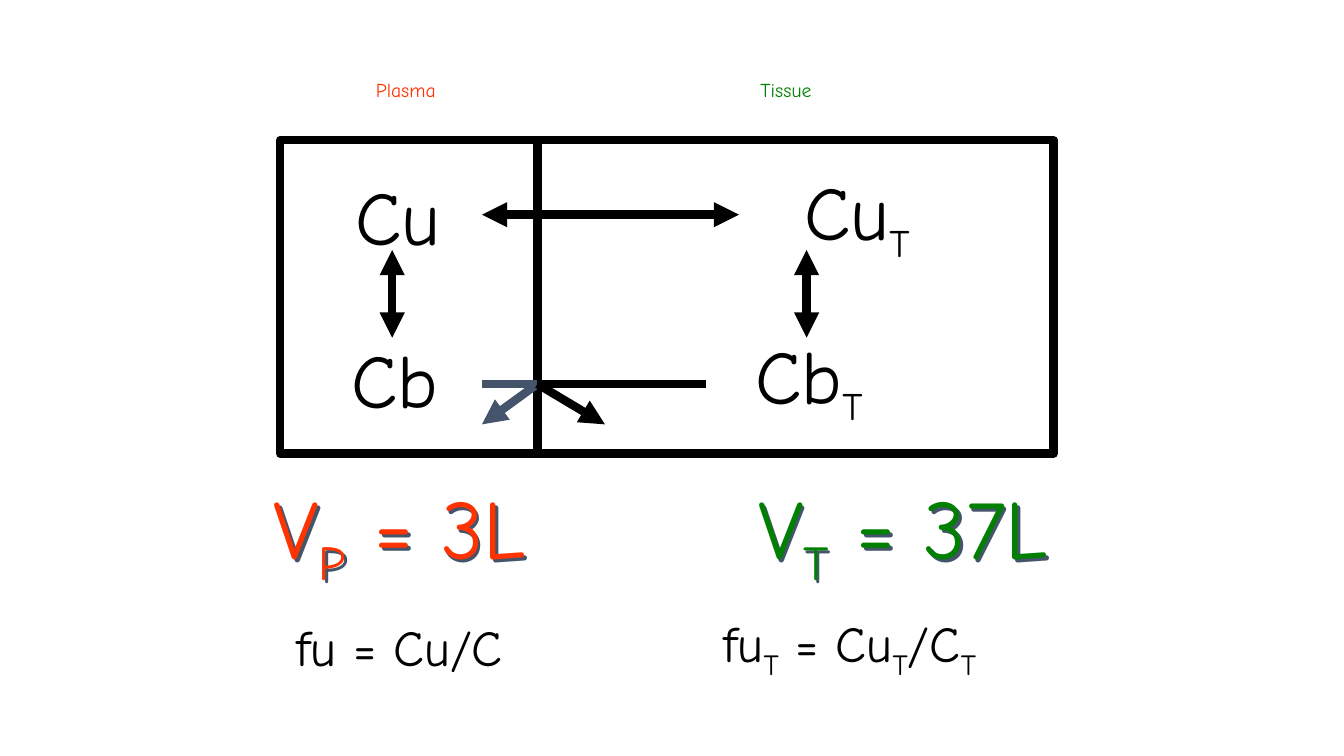
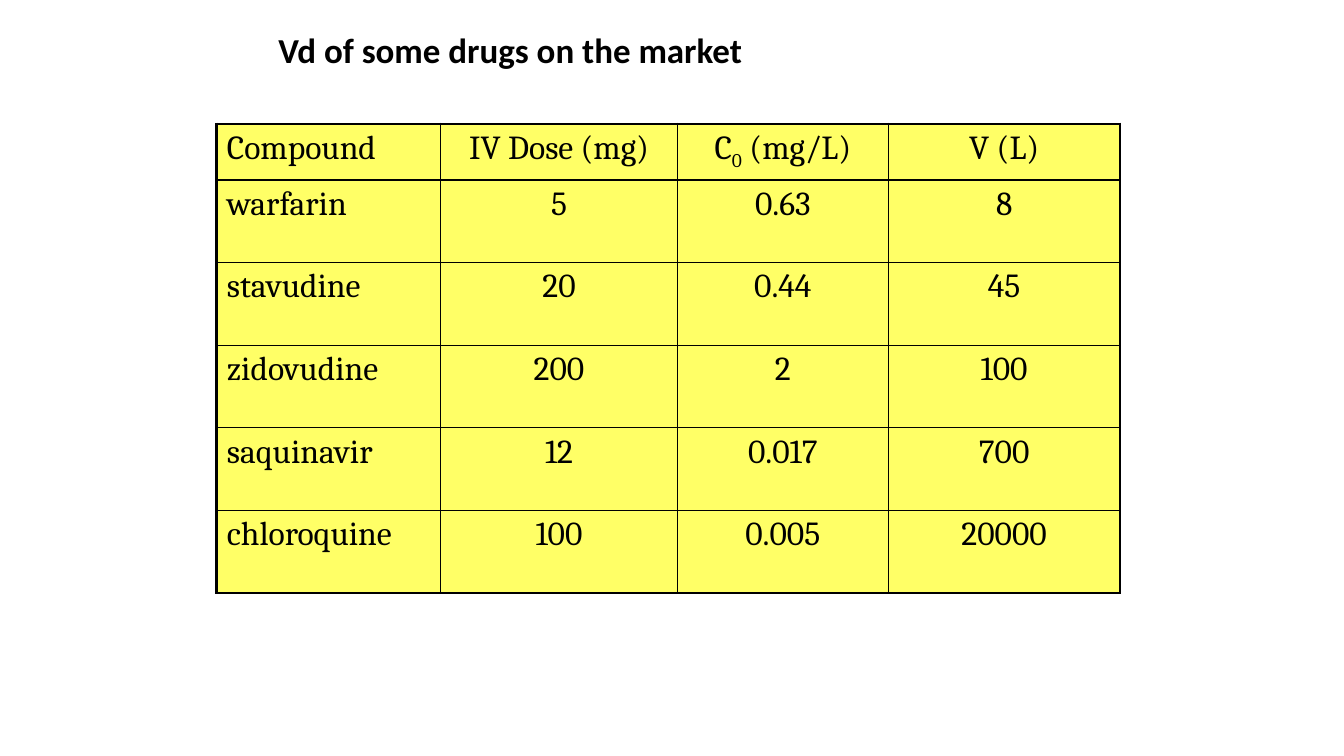
import pptx
import pptx.util
import pptx.dml.color
import pptx.enum.shapes
import pptx.enum.text
import pptx.oxml.ns
from lxml import etree

Inches, Pt = pptx.util.Inches, pptx.util.Pt
RGBColor = pptx.dml.color.RGBColor
ALIGN = pptx.enum.text.PP_ALIGN
ANCHOR = pptx.enum.text.MSO_ANCHOR
qn = pptx.oxml.ns.qn

BLACK = RGBColor(0x00, 0x00, 0x00)
WHITE = RGBColor(0xFF, 0xFF, 0xFF)
SLATE = RGBColor(0x44, 0x54, 0x6A)
PLASMA_RED = RGBColor(0xFF, 0x33, 0x00)
TISSUE_GREEN = RGBColor(0x00, 0x80, 0x00)
TABLE_YELLOW = RGBColor(0xFF, 0xFF, 0x66)

DIAGRAM_FONT, TITLE_FONT, TABLE_FONT = "Comic Neue", "Calibri", "Cambria"
HEAVY_LINE = 6
OUTER_BORDER, INNER_BORDER = 2.25, 1

# In every text, the pieces between bars are subscripts: "V|P| = 3L".
COMPARTMENTS = (2.78, 1.39, 7.67, 3.11)
MEMBRANE_X = 5.33
FREE_Y, BOUND_Y, BLOCKED_Y = 2.13, 3.81, 4.21
BINDING_TOP, BINDING_BOTTOM = 2.48, 3.35

# start, end, colour, arrow at start, arrow at end
DIAGRAM_LINES = [
    ((MEMBRANE_X, 1.39), (MEMBRANE_X, 4.5), BLACK, False, False),
    ((3.89, BINDING_TOP), (3.89, BINDING_BOTTOM), BLACK, True, True),
    ((8, BINDING_TOP), (8, BINDING_BOTTOM), BLACK, True, True),
    ((4.78, FREE_Y), (7.33, FREE_Y), BLACK, True, True),
    ((4.78, BOUND_Y), (MEMBRANE_X, BOUND_Y), SLATE, False, False),
    ((MEMBRANE_X, BOUND_Y), (4.78, BLOCKED_Y), SLATE, False, True),
    ((7, BOUND_Y), (MEMBRANE_X, BOUND_Y), BLACK, False, False),
    ((MEMBRANE_X, BOUND_Y), (6, BLOCKED_Y), BLACK, False, True),
]

# top, height, size, subscript size, shadow, then (text, left, width, colour) for each side
DIAGRAM_LABELS = [
    (0.72, 0.34, 14, None, False,
     [("Plasma", 3.62, 0.81, PLASMA_RED), ("Tissue", 7.4, 0.79, TISSUE_GREEN)]),
    (1.63, 1.01, 54, 48, False,
     [("Cu", 3.42, 1.05, BLACK), ("Cu|T", 7.82, 1.36, BLACK)]),
    (3.25, 1.01, 54, 48, False,
     [("Cb", 3.36, 1.11, BLACK), ("Cb|T", 7.32, 1.41, BLACK)]),
    (6.06, 0.71, 36, None, False,
     [("fu = Cu/C", 2.76, 2.41, BLACK), ("fu|T| = Cu|T|/C|T", 6.88, 3.1, BLACK)]),
    (4.73, 1.11, 60, None, True,
     [("V|P| = 3L", 2.49, 2.95, PLASMA_RED), ("V|T| = 37L", 7.18, 3.55, TISSUE_GREEN)]),
]

TABLE_TITLE = "Vd of some drugs on the market"
DRUG_ROWS = [
    ("Compound", "IV Dose (mg)", "C|0| (mg/L)", "V (L)"),
    ("warfarin", "5", "0.63", "8"),
    ("stavudine", "20", "0.44", "45"),
    ("zidovudine", "200", "2", "100"),
    ("saquinavir", "12", "0.017", "700"),
    ("chloroquine", "100", "0.005", "20000"),
]
COLUMN_WIDTHS = [2.22, 2.35, 2.09, 2.3]
HEADER_HEIGHT, DRUG_HEIGHT = 0.55, 0.82


def write(paragraph, text, font, size, color, align, subscript_size=None):
    """Fill a paragraph, lowering the pieces of text between bars."""
    paragraph.alignment = align
    paragraph.font.name = font
    paragraph.font.size = Pt(size)
    paragraph.font.color.rgb = color
    for index, piece in enumerate(text.split("|")):
        run = paragraph.add_run()
        run.text = piece
        if index % 2:
            run._r.get_or_add_rPr().set("baseline", "-25000")
            if subscript_size:
                run.font.size = Pt(subscript_size)


def add_text_shadow(box):
    effects = etree.SubElement(box._element.spPr, qn("a:effectLst"))
    shadow = etree.SubElement(effects, qn("a:outerShdw"), dist="35921",
                              dir="2700000", algn="ctr", rotWithShape="0")
    etree.SubElement(shadow, qn("a:srgbClr"), val=str(SLATE))


def add_diagram_line(slide, start, end, color, start_arrow, end_arrow):
    connector = slide.shapes.add_connector(
        pptx.enum.shapes.MSO_CONNECTOR.STRAIGHT,
        *(Inches(value) for value in start + end))
    connector.line.color.rgb = color
    connector.line.width = Pt(HEAVY_LINE)
    line = connector.line._get_or_add_ln()
    for tag, wanted in (("a:headEnd", start_arrow), ("a:tailEnd", end_arrow)):
        if wanted:
            etree.SubElement(line, qn(tag), type="triangle")
    etree.SubElement(connector._element.spPr, qn("a:effectLst"))


def add_label(slide, place, text, size, color, subscript_size, shadowed):
    box = slide.shapes.add_textbox(*(Inches(value) for value in place))
    frame = box.text_frame
    frame.word_wrap = False
    frame.auto_size = pptx.enum.text.MSO_AUTO_SIZE.SHAPE_TO_FIT_TEXT
    frame.vertical_anchor = ANCHOR.MIDDLE
    write(frame.paragraphs[0], text, DIAGRAM_FONT, size, color, ALIGN.CENTER, subscript_size)
    if shadowed:
        add_text_shadow(box)


def build_compartment_slide(slide):
    compartments = slide.shapes.add_shape(
        pptx.enum.shapes.MSO_SHAPE.RECTANGLE, *(Inches(value) for value in COMPARTMENTS))
    compartments.shadow.inherit = False
    compartments.fill.solid()
    compartments.fill.fore_color.rgb = WHITE
    compartments.line.color.rgb = BLACK
    compartments.line.width = Pt(HEAVY_LINE)
    for diagram_line in DIAGRAM_LINES:
        add_diagram_line(slide, *diagram_line)
    for top, height, size, subscript_size, shadowed, sides in DIAGRAM_LABELS:
        for text, left, width, color in sides:
            add_label(slide, (left, top, width, height), text, size, color,
                      subscript_size, shadowed)


def set_borders(cell, outer_edges):
    """Draw the four borders, heavier where the edge is on the table's outside."""
    properties = cell._tc.get_or_add_tcPr()
    for index, (side, is_outer) in enumerate(zip("LRTB", outer_edges)):
        width = Pt(OUTER_BORDER if is_outer else INNER_BORDER)
        border = etree.Element(qn(f"a:ln{side}"), w=str(width))
        fill = etree.SubElement(border, qn("a:solidFill"))
        etree.SubElement(fill, qn("a:srgbClr"), val=str(BLACK))
        properties.insert(index, border)


def build_drug_slide(slide):
    title = slide.shapes.add_textbox(Inches(1.85), Inches(0.28), Inches(6.42), Inches(0.51))
    title.text_frame.word_wrap = True
    heading = title.text_frame.paragraphs[0]
    write(heading, TABLE_TITLE, TITLE_FONT, 25, BLACK, ALIGN.CENTER)
    heading.font.bold = True
    heading.line_spacing = 0.9

    row_heights = [HEADER_HEIGHT] + [DRUG_HEIGHT] * (len(DRUG_ROWS) - 1)
    drugs = slide.shapes.add_table(
        len(DRUG_ROWS), len(COLUMN_WIDTHS), Inches(2.15), Inches(1.23),
        Inches(sum(COLUMN_WIDTHS)), Inches(sum(row_heights))).table
    drugs.first_row = drugs.horz_banding = False
    for column, width in zip(drugs.columns, COLUMN_WIDTHS):
        column.width = Inches(width)
    last_row, last_column = len(DRUG_ROWS) - 1, len(COLUMN_WIDTHS) - 1
    for r, values in enumerate(DRUG_ROWS):
        drugs.rows[r].height = Inches(row_heights[r])
        for c, value in enumerate(values):
            cell = drugs.cell(r, c)
            cell.fill.solid()
            cell.fill.fore_color.rgb = TABLE_YELLOW
            set_borders(cell, (c == 0, c == last_column, r == 0, r == last_row))
            write(cell.text_frame.paragraphs[0], value, TABLE_FONT, 24, BLACK,
                  ALIGN.CENTER if c else ALIGN.LEFT)


def main():
    deck = pptx.Presentation()
    deck.slide_width, deck.slide_height = Inches(13.33), Inches(7.5)
    blank = deck.slide_layouts[6]
    for build in (build_compartment_slide, build_drug_slide):
        build(deck.slides.add_slide(blank))
    deck.save("out.pptx")


if __name__ == "__main__":
    main()
